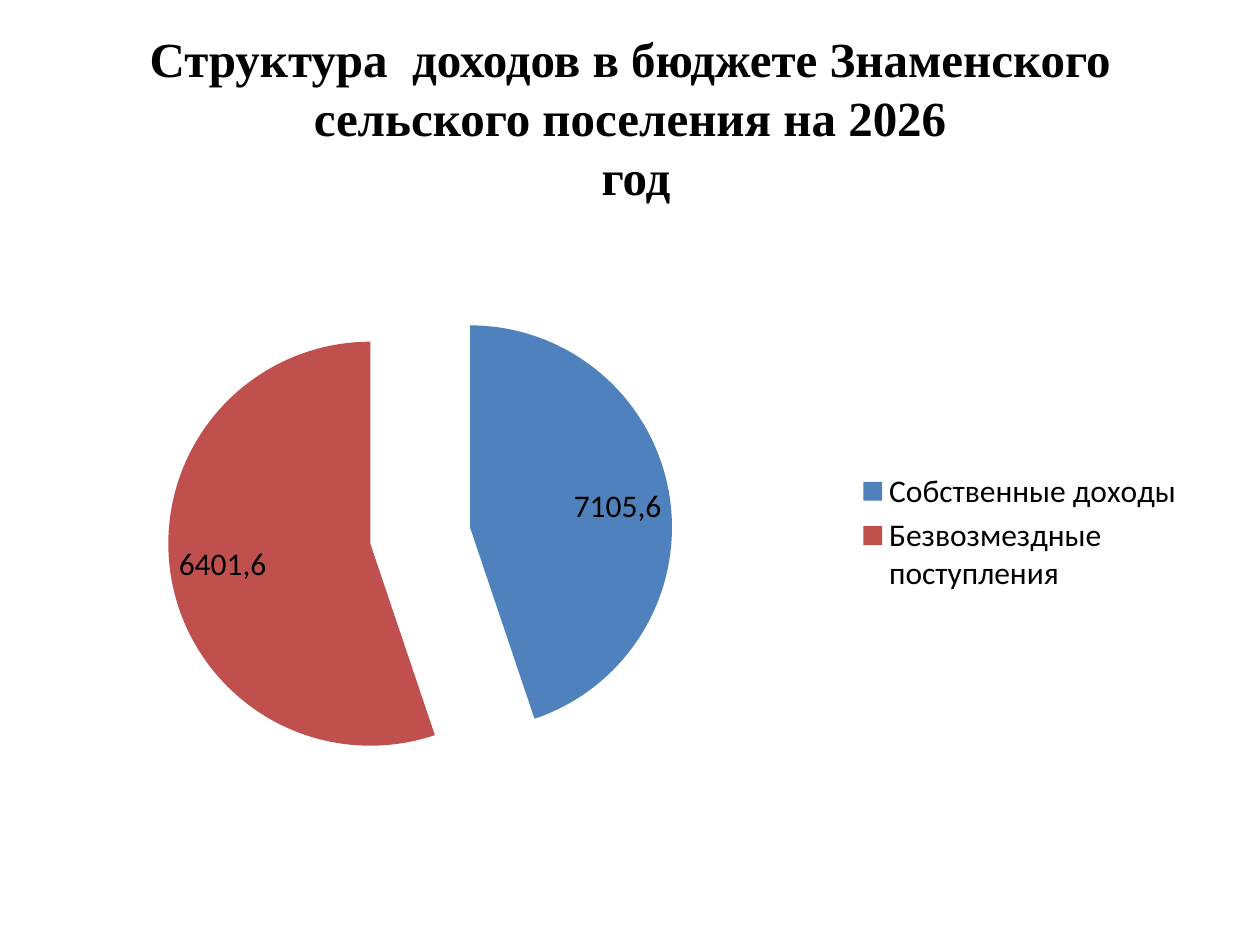
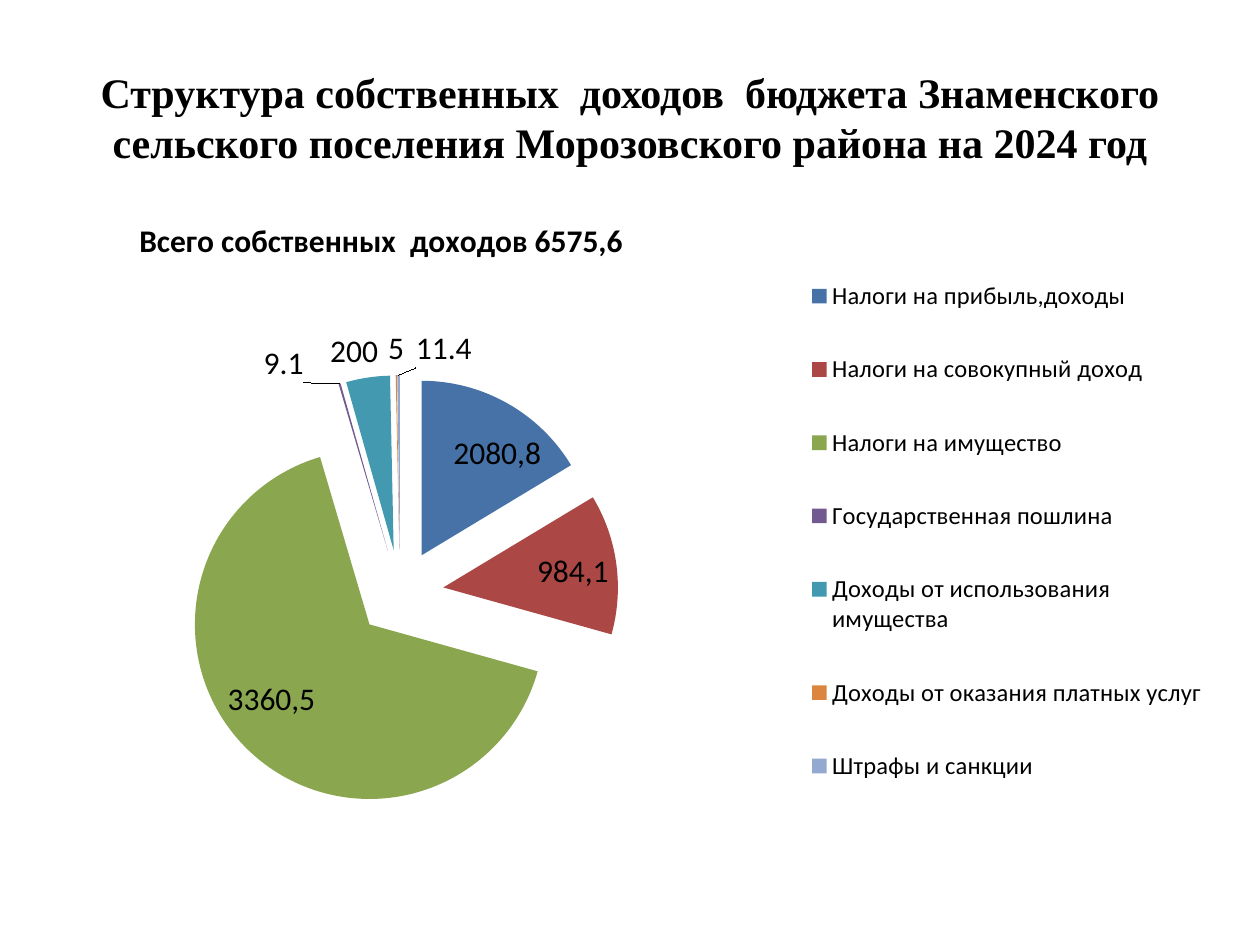
import dataclasses

import lxml.etree
import pptx
import pptx.chart.data
import pptx.dml.color
import pptx.enum.chart
import pptx.enum.text
import pptx.oxml.ns
import pptx.util

Cm = pptx.util.Cm
Pt = pptx.util.Pt
RGBColor = pptx.dml.color.RGBColor
LabelPosition = pptx.enum.chart.XL_LABEL_POSITION

BLACK = RGBColor(0x00, 0x00, 0x00)
BLUE = RGBColor(0x4F, 0x81, 0xBD)
RED = RGBColor(0xC0, 0x50, 0x4D)
DEEP_BLUE = RGBColor(0x46, 0x72, 0xA8)
DEEP_RED = RGBColor(0xAB, 0x47, 0x44)
GREEN = RGBColor(0x8A, 0xA6, 0x4F)
PURPLE = RGBColor(0x72, 0x59, 0x90)
TEAL = RGBColor(0x42, 0x99, 0xB0)
ORANGE = RGBColor(0xDC, 0x85, 0x3E)
PALE_BLUE = RGBColor(0x93, 0xA9, 0xCF)

TITLE_FONT = "Times New Roman"
CHART_FONT = "Calibri"
CHART_SIZE = Pt(18)
TITLE_ONLY_LAYOUT = 5
EXPLOSION_PERCENT = 25


@dataclasses.dataclass
class Slice:
    category: str
    value: float
    color: RGBColor
    label: str = ""
    shift: tuple[float, float] | None = None


@dataclasses.dataclass
class PieSlide:
    title: str
    title_size: int
    left: float
    top: float
    plot_box: tuple[float, float, float, float]
    slices: list[Slice]
    legend_size: int = 18
    legend_box: tuple[float, float, float, float] | None = None
    chart_title: str = ""
    chart_title_place: tuple[float, float] = (0.04, 0.01)


PIE_SLIDES = [
    PieSlide(
        title="Структура  доходов в бюджете Знаменского сельского поселения на 2026\v год",
        title_size=28,
        left=1.27,
        top=4.45,
        plot_box=(0.09, 0.1, 0.45, 0.81),
        slices=[
            Slice("Собственные доходы", 4958, BLUE, "7105,6"),
            Slice("Безвозмездные поступления", 6102.2, RED, "6401,6"),
        ],
    ),
    PieSlide(
        title="Структура собственных  доходов  бюджета Знаменского "
        "сельского поселения Морозовского района на 2024 год",
        title_size=24,
        left=1.78,
        top=4.17,
        plot_box=(0.08, 0.27, 0.39, 0.7),
        slices=[
            Slice("Налоги на прибыль,доходы", 808.1, DEEP_BLUE, "2080,8"),
            Slice("Налоги на совокупный доход", 640.7, DEEP_RED, "984,1"),
            Slice("Налоги на имущество", 3265, GREEN, "3360,5"),
            Slice("Государственная пошлина", 9.1, PURPLE, shift=(-0.03, 0.01)),
            Slice("Доходы от использования имущества", 200, TEAL, shift=(0.01, 0)),
            Slice("Доходы от оказания платных услуг", 5, ORANGE),
            Slice("Штрафы и санкции", 11.4, PALE_BLUE, shift=(0.04, 0)),
        ],
        legend_size=14,
        legend_box=(0.63, 0.05, 0.36, 0.94),
        chart_title="Всего собственных  доходов 6575,6",
    ),
]


def add_child(parent, name: str, value: object = None):
    child = lxml.etree.SubElement(parent, pptx.oxml.ns.qn(name))
    if value is not None:
        child.set("val", str(value))
    return child


def place(parent, index: int, box: tuple[float, ...], edge: bool = True, inner: bool = False) -> None:
    for old_layout in parent.findall(pptx.oxml.ns.qn("c:layout")):
        parent.remove(old_layout)
    layout = add_child(parent, "c:layout")
    parent.insert(index, layout)
    manual = add_child(layout, "c:manualLayout")
    if inner:
        add_child(manual, "c:layoutTarget", "inner")
    if edge:
        add_child(manual, "c:xMode", "edge")
        add_child(manual, "c:yMode", "edge")
    for name, value in zip(("c:x", "c:y", "c:w", "c:h"), box):
        add_child(manual, name, value)


def format_text(font, size: int, name: str, bold: bool = False) -> None:
    font.size = size
    font.name = name
    font.bold = bold
    font.color.rgb = BLACK


def format_title(slide, content: PieSlide) -> None:
    title = slide.shapes.title
    title.left, title.top, title.width, title.height = Cm(1.27), Cm(0.76), Cm(22.86), Cm(3.18)
    text_frame = title.text_frame
    text_frame.text = content.title
    text_frame.auto_size = pptx.enum.text.MSO_AUTO_SIZE.NONE
    text_frame.vertical_anchor = pptx.enum.text.MSO_ANCHOR.MIDDLE
    paragraph = text_frame.paragraphs[0]
    paragraph.alignment = pptx.enum.text.PP_ALIGN.CENTER
    format_text(paragraph.font, Pt(content.title_size), TITLE_FONT, bold=True)


def format_slices(chart, slices: list[Slice]) -> None:
    series_element = chart.element.xpath(".//c:ser")[0]
    explosion = add_child(series_element, "c:explosion", EXPLOSION_PERCENT)
    series_element.find(pptx.oxml.ns.qn("c:tx")).addnext(explosion)

    series = chart.plots[0].series[0]
    series.data_labels.show_value = True
    format_text(series.data_labels.font, CHART_SIZE, CHART_FONT)
    for index, pie_slice in enumerate(slices):
        point = series.points[index]
        point.format.fill.solid()
        point.format.fill.fore_color.rgb = pie_slice.color
        label = point.data_label
        if pie_slice.label:
            label.text_frame.text = pie_slice.label
            format_text(label.text_frame.paragraphs[0].font, CHART_SIZE, CHART_FONT)
            label.position = LabelPosition.BEST_FIT
        else:
            format_text(label.font, CHART_SIZE, CHART_FONT)
            label.position = LabelPosition.OUTSIDE_END
        if pie_slice.shift:
            label_element = series_element.xpath(f"./c:dLbls/c:dLbl[c:idx/@val='{index}']")[0]
            place(label_element, 1, pie_slice.shift, edge=False)


def add_pie(slide, content: PieSlide) -> None:
    chart_data = pptx.chart.data.CategoryChartData()
    chart_data.categories = [pie_slice.category for pie_slice in content.slices]
    chart_data.add_series("Series 1", [pie_slice.value for pie_slice in content.slices])
    chart = slide.shapes.add_chart(
        pptx.enum.chart.XL_CHART_TYPE.PIE,
        Cm(content.left), Cm(content.top), Cm(22.86), Cm(12.57), chart_data,
    ).chart
    format_text(chart.font, CHART_SIZE, CHART_FONT)
    chart.plots[0].vary_by_categories = True
    format_slices(chart, content.slices)

    chart.has_legend = True
    chart.legend.position = pptx.enum.chart.XL_LEGEND_POSITION.RIGHT
    chart.legend.include_in_layout = False
    format_text(chart.legend.font, Pt(content.legend_size), CHART_FONT)
    if content.legend_box:
        place(chart.element.xpath(".//c:legend")[0], 1, content.legend_box)

    chart.has_title = bool(content.chart_title)
    if content.chart_title:
        text_frame = chart.chart_title.text_frame
        text_frame.text = content.chart_title
        format_text(text_frame.paragraphs[0].font, CHART_SIZE, CHART_FONT, bold=True)
        place(chart.element.xpath("./c:chart/c:title")[0], 1, content.chart_title_place)
    place(chart.element.xpath(".//c:plotArea")[0], 0, content.plot_box, inner=True)


def main() -> None:
    presentation = pptx.Presentation()
    presentation.slide_width = Cm(25.4)
    presentation.slide_height = Cm(19.05)
    for content in PIE_SLIDES:
        slide = presentation.slides.add_slide(presentation.slide_layouts[TITLE_ONLY_LAYOUT])
        format_title(slide, content)
        add_pie(slide, content)
    presentation.save("out.pptx")


if __name__ == "__main__":
    main()
